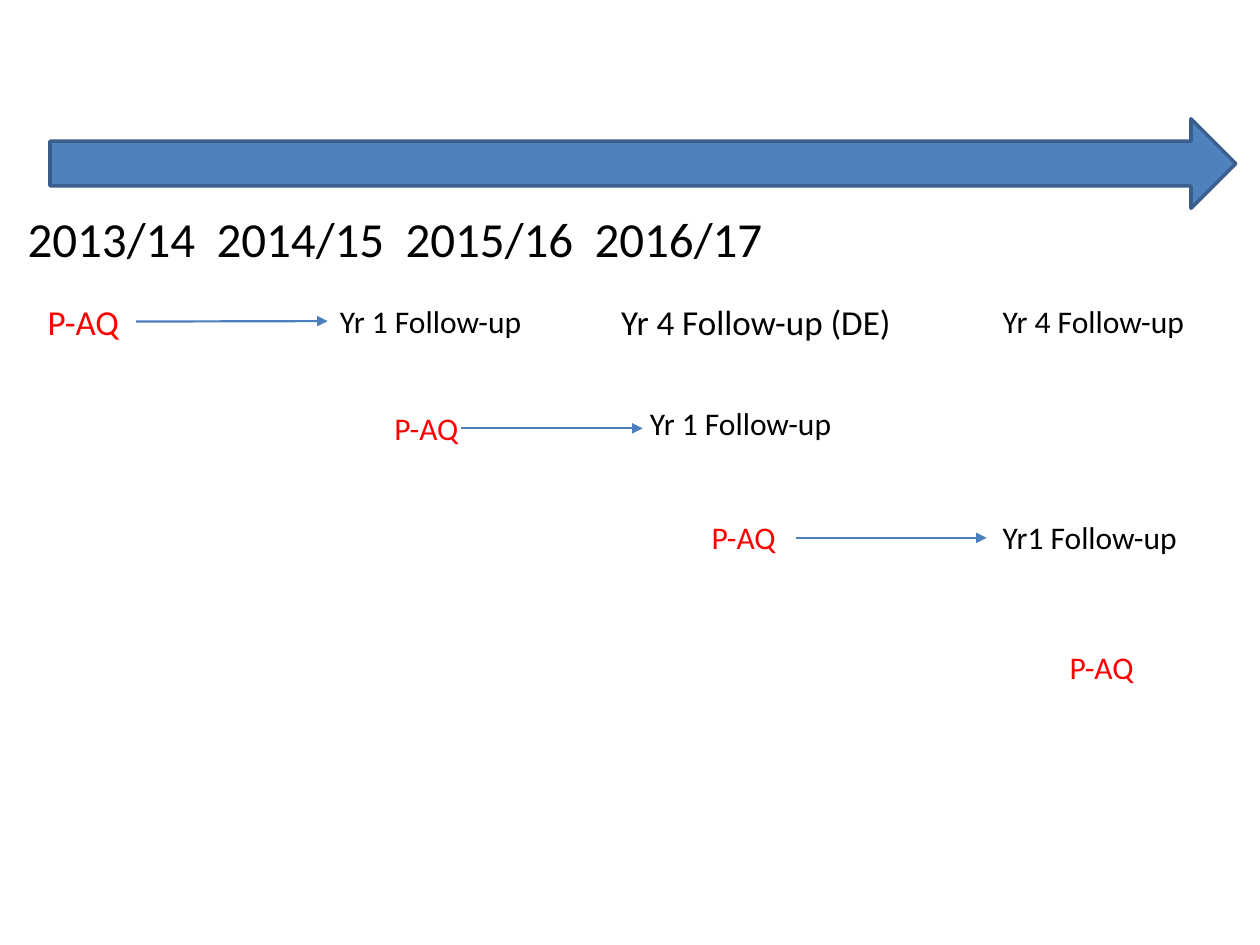
from lxml import etree
from pptx import Presentation
from pptx.dml.color import RGBColor
from pptx.enum import shapes, text
from pptx.oxml import ns
from pptx.util import Pt

COLORS = {"blue": "4F81BD", "outline": "3A5F8C", "connector": "4B7EBC",
          "red": "FF0000", "black": "000000"}


def format_font(paragraph, size, color):
    paragraph.font.name = "Calibri"
    paragraph.font.size = Pt(size)
    paragraph.font.color.rgb = RGBColor.from_string(COLORS[color])


presentation = Presentation()
presentation.slide_width, presentation.slide_height = Pt(720), Pt(540)
slide = presentation.slides.add_slide(presentation.slide_layouts[1])
title = slide.shapes.title
title.element.getparent().remove(title.element)

years = slide.placeholders[1]
years.left, years.top, years.width, years.height = Pt(8.6), Pt(69), Pt(711.4), Pt(394)
years.text_frame.margin_top = Pt(50)
paragraph = years.text_frame.paragraphs[0]
paragraph.text = "2013/14\t2014/15\t2015/16\t2016/17"
paragraph.space_before = Pt(0)
format_font(paragraph, 28, "black")
properties = paragraph._p.get_or_add_pPr()
properties.set("marL", "0")
properties.set("indent", "0")
tab_list = etree.Element(ns.qn("a:tabLst"))
for position in (143, 315.5, 516):
    etree.SubElement(tab_list, ns.qn("a:tab"), pos=str(Pt(position)), algn="l")
default_font = properties.find(ns.qn("a:defRPr"))
default_font.addprevious(etree.Element(ns.qn("a:buNone")))
default_font.addprevious(tab_list)

timeline = slide.shapes.add_shape(
    shapes.MSO_SHAPE.RIGHT_ARROW, Pt(28.6), Pt(67.9), Pt(677.6), Pt(51.2))
timeline.shadow.inherit = False
timeline.fill.solid()
timeline.fill.fore_color.rgb = RGBColor.from_string(COLORS["blue"])
timeline.line.color.rgb = RGBColor.from_string(COLORS["outline"])
timeline.line.width = Pt(2)

labels = [
    ("P-AQ", 20.2, 168, 57.6, 20, "red"),
    ("Yr 1 Follow-up", 187.2, 169, 141, 18, "black"),
    ("Yr 4 Follow-up (DE)", 347.8, 168, 198.7, 20, "black"),
    ("Yr 4 Follow-up", 565.9, 169, 215, 18, "black"),
    ("P-AQ", 218.2, 230.4, 73.4, 18, "red"),
    ("Yr 1 Follow-up", 364.3, 227.5, 180.7, 18, "black"),
    ("P-AQ", 399.6, 292.5, 67.7, 18, "red"),
    ("Yr1 Follow-up", 565.9, 292.5, 172.8, 18, "black"),
    ("P-AQ", 604.1, 366.5, 136, 18, "red"),
]
boxes = []
for wording, left, top, width, size, color in labels:
    height = 31.5 if size == 20 else 29
    box = slide.shapes.add_textbox(Pt(left), Pt(top), Pt(width), Pt(height))
    box.text_frame.word_wrap = True
    box.text_frame.auto_size = text.MSO_AUTO_SIZE.SHAPE_TO_FIT_TEXT
    paragraph = box.text_frame.paragraphs[0]
    paragraph.text = wording
    format_font(paragraph, size, color)
    boxes.append(box)

connectors = []
for start, end, y in [(77.8, 187.2, 183.6), (263.5, 367.2, 244.8), (455, 563.8, 307.4)]:
    connector = slide.shapes.add_connector(
        shapes.MSO_CONNECTOR.STRAIGHT, Pt(start), Pt(y), Pt(end), Pt(y))
    connector.line.color.rgb = RGBColor.from_string(COLORS["connector"])
    connector.line.width = Pt(1.25)
    etree.SubElement(connector.line._get_or_add_ln(), ns.qn("a:tailEnd"), type="triangle")
    etree.SubElement(connector._element.spPr, ns.qn("a:effectLst"))
    connectors.append(connector)
connectors[0].begin_connect(boxes[0], 3)
connectors[0].end_connect(boxes[1], 1)

presentation.save("out.pptx")
